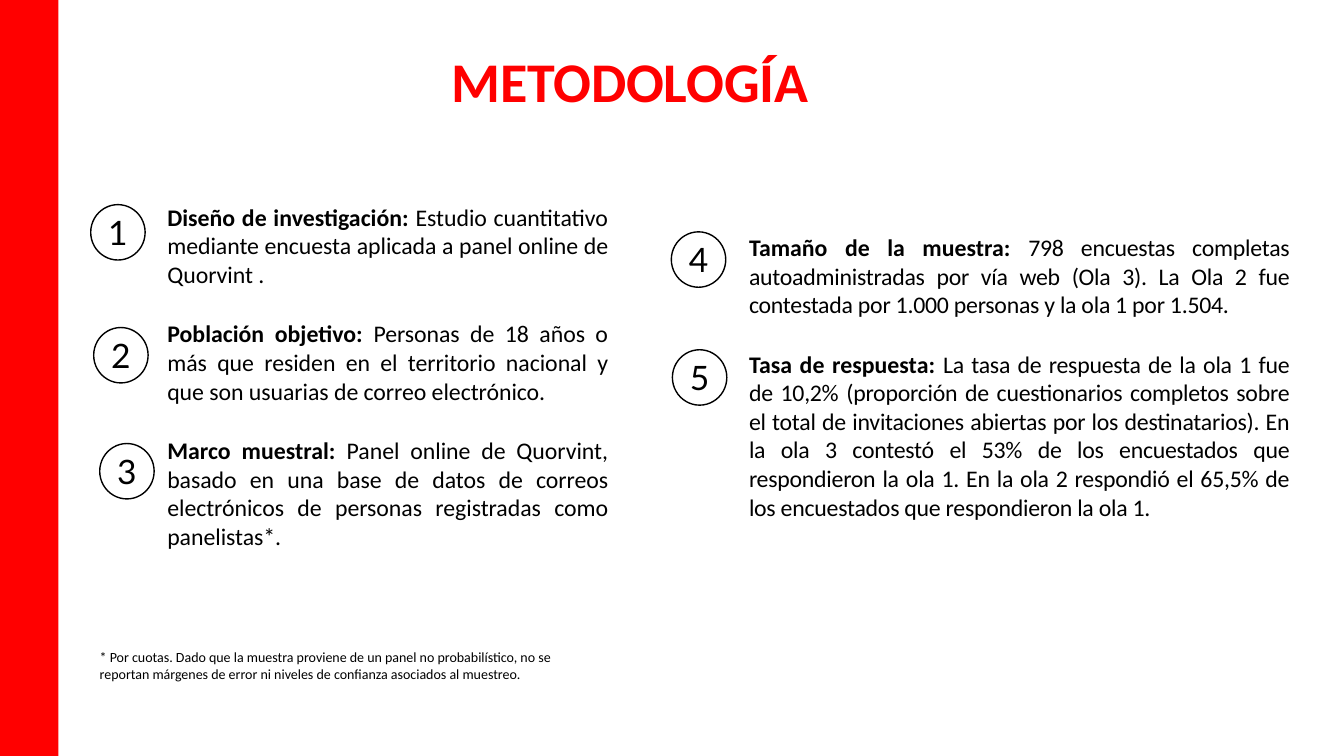
from dataclasses import dataclass

from pptx import Presentation
from pptx import util as u
from pptx.dml.color import RGBColor
from pptx.enum import shapes, text


@dataclass(frozen=True)
class Theme:
    red: RGBColor = RGBColor(0xFF, 0, 0)
    black: RGBColor = RGBColor(0, 0, 0)
    body_font: str = "Calibri"
    badge_font: str = "Lato"
    title_size: int = 40
    body_size: int = 17
    note_size: int = 10
    badge_size: int = 24
    item_gap: int = 22


@dataclass(frozen=True)
class Box:
    """Left, top, width and height as percentages of the slide."""
    left: float
    top: float
    width: float
    height: float

    def lengths(self):
        return (int(WIDTH * self.left / 100), int(HEIGHT * self.top / 100),
                int(WIDTH * self.width / 100), int(HEIGHT * self.height / 100))


THEME = Theme()
WIDTH, HEIGHT = u.Inches(13.33), u.Inches(7.5)
BADGE = (4.05, 7.33)

TITLE = "METODOLOGÍA"
FOOTNOTE = ("* Por cuotas. Dado que la muestra proviene de un panel no probabilístico, "
            "no se reportan márgenes de error ni niveles de confianza asociados al muestreo.")

# Each item: number, badge offset from the column's corner, heading, text
DESIGN = [
    ("1", (-5.7, 0.27), "Diseño de investigación: ",
     "Estudio cuantitativo mediante encuesta aplicada a panel online de Quorvint ."),
    ("2", (-5.48, 16.53), "Población objetivo: ",
     "Personas de 18 años o más que residen en el territorio nacional y que son "
     "usuarias de correo electrónico."),
    ("3", (-5.03, 31.87), "Marco muestral: ",
     "Panel online de Quorvint, basado en una base de datos de correos electrónicos "
     "de personas registradas como panelistas*."),
]
SAMPLE = [
    ("4", (-5.78, -0.13), "Tamaño de la muestra: ",
     "798 encuestas completas autoadministradas por vía web (Ola 3). La Ola 2 fue "
     "contestada por 1.000 personas y la ola 1 por 1.504."),
    ("5", (-5.7, 15.47), "Tasa de respuesta: ",
     "La tasa de respuesta de la ola 1 fue de 10,2% (proporción de cuestionarios "
     "completos sobre el total de invitaciones abiertas por los destinatarios). En la "
     "ola 3 contestó el 53% de los encuestados que respondieron la ola 1. En la ola 2 "
     "respondió el 65,5% de los encuestados que respondieron la ola 1."),
]


def set_all(target, **values):
    for name, value in values.items():
        setattr(target, name, value)


def clear_insets(frame, wrap):
    set_all(frame, word_wrap=wrap, margin_left=0, margin_top=0,
            margin_right=0, margin_bottom=0)


def add_span(para, words, size, color=THEME.black, font=THEME.body_font,
             bold=False, tracking=0):
    span = para.add_run()
    span.text = words
    set_all(span.font, name=font, size=u.Pt(size), bold=bold)
    span.font.color.rgb = color
    if tracking:  # hundredths of a point
        span.font._element.set("spc", str(tracking))


def add_frame(page, box):
    frame = page.shapes.add_textbox(*box.lengths()).text_frame
    clear_insets(frame, True)
    return frame


def add_band(page, box):
    band = page.shapes.add_shape(shapes.MSO_SHAPE.RECTANGLE, *box.lengths())
    band.shadow.inherit = False
    band.fill.solid()
    band.fill.fore_color.rgb = THEME.red
    band.line.fill.background()


def add_line_of_text(page, box, words, size, **style):
    add_span(add_frame(page, box).paragraphs[0], words, size, **style)


def add_badge(page, box, number):
    badge = page.shapes.add_shape(shapes.MSO_SHAPE.OVAL, *box.lengths())
    badge.shadow.inherit = False
    badge.fill.background()
    badge.line.color.rgb = THEME.black
    badge.line.width = u.Pt(1)
    frame = badge.text_frame
    clear_insets(frame, False)
    frame.vertical_anchor = text.MSO_ANCHOR.MIDDLE
    para = frame.paragraphs[0]
    para.alignment = text.PP_ALIGN.CENTER
    add_span(para, number, THEME.badge_size, font=THEME.badge_font)


def add_column(page, box, items, tracking):
    frame = add_frame(page, box)
    for index, (number, (across, down), heading, words) in enumerate(items):
        para = frame.add_paragraph() if index else frame.paragraphs[0]
        para.alignment = text.PP_ALIGN.JUSTIFY
        if index:
            para.space_before = u.Pt(THEME.item_gap)
        add_span(para, heading, THEME.body_size, bold=True)
        add_span(para, words, THEME.body_size, tracking=tracking)
        add_badge(page, Box(box.left + across, box.top + down, *BADGE), number)


def build_method_page(deck):
    page = deck.slides.add_slide(deck.slide_layouts[6])
    # Side band and title
    add_band(page, Box(0, 0, 4.35, 100))
    add_line_of_text(page, Box(33.6, 6.17, 28, 9.2), TITLE, THEME.title_size,
                     color=THEME.red, bold=True, tracking=-10)
    # Numbered columns
    add_column(page, Box(12.45, 26.8, 32.78, 46.67), DESIGN, -5)
    add_column(page, Box(55.73, 30.8, 40.2, 38.67), SAMPLE, -20)
    # Footnote
    add_line_of_text(page, Box(7.42, 85.8, 34.43, 4.67), FOOTNOTE, THEME.note_size)


def main():
    deck = Presentation()
    set_all(deck, slide_width=WIDTH, slide_height=HEIGHT)
    build_method_page(deck)
    deck.save("out.pptx")


if __name__ == "__main__":
    main()
